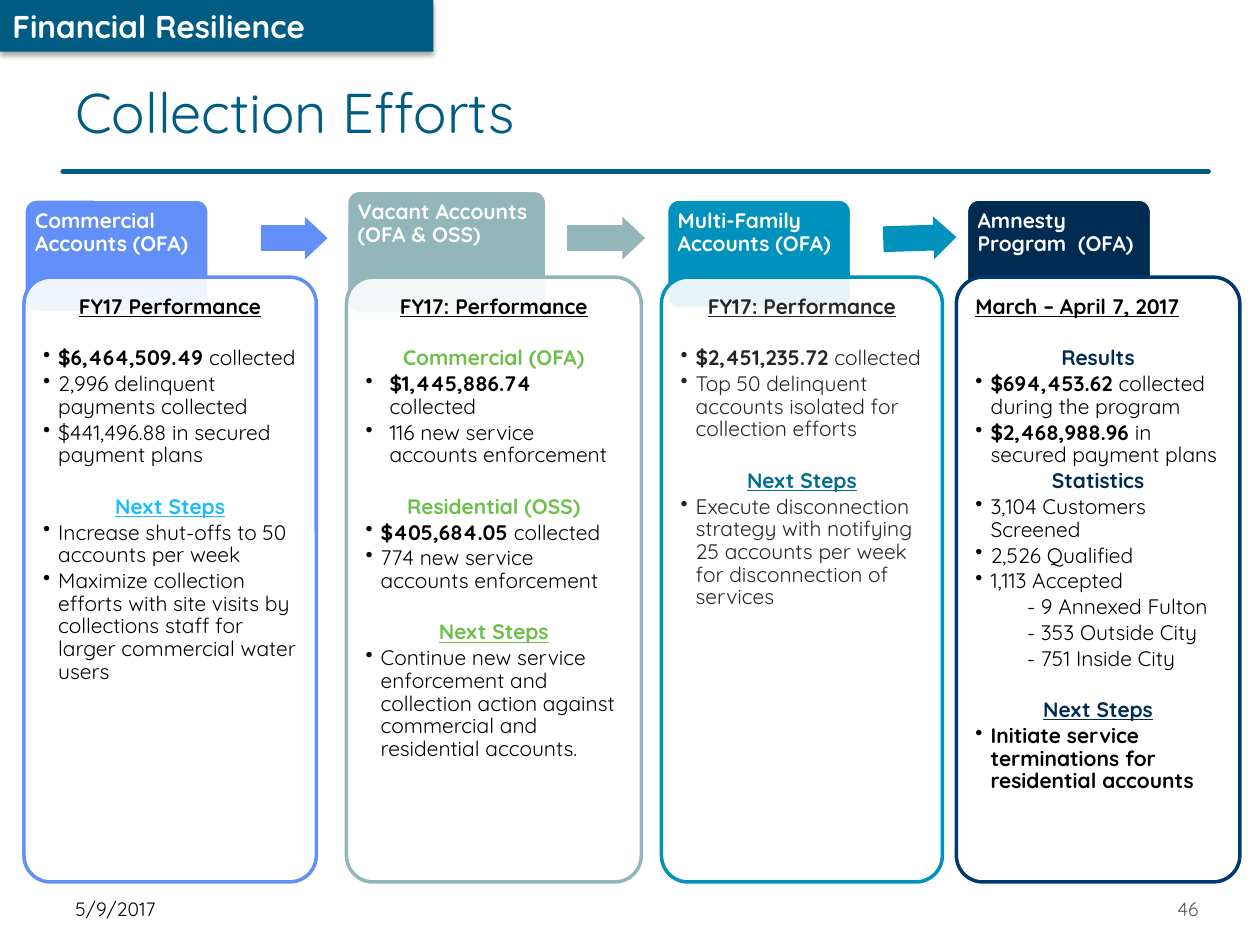
from dataclasses import dataclass

from lxml import etree
from pptx import Presentation
from pptx.dml.color import RGBColor
from pptx.enum.shapes import MSO_CONNECTOR, MSO_SHAPE
from pptx.enum.text import MSO_ANCHOR, PP_ALIGN
from pptx.oxml.ns import qn
from pptx.util import Inches, Pt

FONT = "Quicksand"
WHITE = RGBColor(0xFF, 0xFF, 0xFF)
BLACK = RGBColor(0x00, 0x00, 0x00)
CHARCOAL = RGBColor(0x26, 0x26, 0x26)
GRAY = RGBColor(0x59, 0x59, 0x59)
TEAL = RGBColor(0x00, 0x5C, 0x82)
BLUE = RGBColor(0x62, 0x90, 0xF8)
SKY = RGBColor(0x1B, 0xBC, 0xFF)
SAGE = RGBColor(0x93, 0xB6, 0xBB)
GREEN = RGBColor(0x6C, 0xC0, 0x49)
CYAN = RGBColor(0x00, 0x92, 0xBC)
DEEP_CYAN = RGBColor(0x00, 0x6D, 0x8D)
NAVY = RGBColor(0x00, 0x2B, 0x53)
NAVY_LINE = RGBColor(0x00, 0x39, 0x6F)

CARD_TOP, CARD_HEIGHT = 2.2, 4.8
SECTION_GAP = 14.6  # points above a new section


@dataclass
class Head:
    text: str
    color: RGBColor = BLACK
    underline: bool = True
    align: PP_ALIGN = PP_ALIGN.CENTER
    gap: float = SECTION_GAP


@dataclass
class Item:
    lead: str = ""  # bold start
    rest: str = ""
    gap: float = 0
    hang: float = 0.12
    margin: float = 0.12
    bullet: bool = True


@dataclass
class Column:
    title: str
    color: RGBColor
    border: RGBColor
    ink: RGBColor
    tab: tuple[float, float, float, float]
    left: float
    width: float
    lines: list
    opacity: int = 90


@dataclass
class Arrow:
    left: float
    width: float
    color: RGBColor
    rotation: float = 0


def sub_item(text: str) -> Item:
    return Item(rest=text, margin=0.41, hang=0, bullet=False)


COLUMNS = [
    Column("Commercial Accounts (OFA)", BLUE, BLUE, BLACK, (0.19, 1.58, 1.47, 0.9), 0.19, 2.32, [
        Head("FY17 Performance", gap=0),
        Item("$6,464,509.49 ", "collected", gap=SECTION_GAP),
        Item(rest="2,996 delinquent payments collected"),
        Item(rest="$441,496.88 in secured payment plans"),
        Head("Next Steps", SKY),
        Item(rest="Increase shut-offs to 50 accounts per week"),
        Item(rest="Maximize collection efforts with site visits by "
                  "collections staff for larger commercial water users"),
    ]),
    Column("Vacant Accounts (OFA & OSS)", SAGE, SAGE, BLACK, (2.75, 1.51, 1.59, 0.98), 2.75, 2.34, [
        Head("FY17: Performance", gap=0),
        Head("Commercial (OFA)", GREEN, underline=False),
        Item("$1,445,886.74 ", "collected", margin=0.19, hang=0.19),
        Item(rest="116 new service accounts enforcement", margin=0.19, hang=0.19),
        Head("Residential (OSS)", GREEN, underline=False),
        Item("$405,684.05 ", "collected"),
        Item(rest="774 new service accounts enforcement"),
        Head("Next Steps", GREEN),
        Item(rest="Continue new service enforcement and collection action "
                  "against commercial and residential accounts."),
    ]),
    Column("Multi-Family Accounts (OFA)", CYAN, CYAN, CHARCOAL, (5.29, 1.58, 1.47, 0.87), 5.25, 2.23, [
        Head("FY17: Performance", CHARCOAL, gap=0),
        Item("$2,451,235.72 ", "collected", gap=SECTION_GAP),
        Item(rest="Top 50 delinquent accounts isolated for collection efforts"),
        Head("Next Steps", DEEP_CYAN),
        Item(rest="Execute disconnection strategy with notifying 25 accounts "
                  "per week for disconnection of services"),
    ]),
    Column("Amnesty Program  (OFA)", NAVY, NAVY_LINE, BLACK, (7.67, 1.58, 1.47, 1.02), 7.59, 2.25, [
        Head("March – April 7, 2017", align=PP_ALIGN.LEFT, gap=0),
        Head("Results", NAVY, underline=False),
        Item("$694,453.62 ", "collected during the program"),
        Item("$2,468,988.96 ", "in secured payment plans"),
        Head("Statistics", NAVY, underline=False, gap=0),
        Item(rest="3,104 Customers Screened"),
        Item(rest="2,526 Qualified"),
        Item(rest="1,113 Accepted"),
        sub_item("- 9 Annexed Fulton"),
        sub_item("- 353 Outside City"),
        sub_item("- 751 Inside City"),
        Head("Next Steps", NAVY),
        Item("Initiate service terminations for residential accounts"),
    ], opacity=100),
]
ARROWS = [Arrow(2.07, 0.53, BLUE), Arrow(4.5, 0.62, SAGE), Arrow(7.01, 0.58, CYAN, -1.8)]


def add_text(p, text: str, *, size=12, color=BLACK, bold=False, underline=False) -> None:
    r = p.add_run()
    r.text = text
    f = r.font
    f.name, f.size, f.bold, f.underline = FONT, Pt(size), bold, underline
    f.color.rgb = color


def set_frame(shape, inset_x: float, inset_y: float, anchor=MSO_ANCHOR.TOP):
    tf = shape.text_frame
    tf.word_wrap = True
    tf.vertical_anchor = anchor
    tf.margin_left = tf.margin_right = Inches(inset_x)
    tf.margin_top = tf.margin_bottom = Inches(inset_y)
    return tf


def add_box(s, kind, box, fill=None, line=None):
    sp = s.shapes.add_shape(kind, *map(Inches, box))
    sp.shadow.inherit = False
    sp.fill.solid()
    sp.fill.fore_color.rgb = fill
    if line is None:
        sp.line.fill.background()
    else:
        sp.line.color.rgb = line
        sp.line.width = Pt(2)
    return sp


def add_rounded(s, box, radius: float, fill, line, inset: float):
    sp = add_box(s, MSO_SHAPE.ROUNDED_RECTANGLE, box, fill, line)
    sp.adjustments[0] = radius / min(box[2:])
    return sp, set_frame(sp, inset, inset)


def add_label(s, box, text: str, align=PP_ALIGN.LEFT, **fmt) -> None:
    tf = set_frame(s.shapes.add_textbox(*map(Inches, box)), 0.1, 0, MSO_ANCHOR.MIDDLE)
    tf.paragraphs[0].alignment = align
    add_text(tf.paragraphs[0], text, **fmt)


def add_line(p, line, ink: RGBColor) -> None:
    p.line_spacing, p.space_after = 0.9, Pt(1.8)
    if line.gap:
        p.space_before = Pt(line.gap)
    if isinstance(line, Head):
        p.alignment = line.align
        add_text(p, line.text, color=line.color, bold=True, underline=line.underline)
        return
    p.alignment = PP_ALIGN.LEFT
    pPr = p._p.get_or_add_pPr()
    pPr.set("marL", str(Inches(line.margin)))
    pPr.set("indent", str(-Inches(line.hang)))
    if line.bullet:
        etree.SubElement(pPr, qn("a:buChar"), char="•")
    for text, bold in ((line.lead, True), (line.rest, False)):
        if text:
            add_text(p, text, color=ink, bold=bold)


def add_column(s, col: Column) -> None:
    _, tf = add_rounded(s, col.tab, 0.1, col.color, WHITE, 0.06)
    p = tf.paragraphs[0]
    p.alignment, p.line_spacing = PP_ALIGN.LEFT, 0.9
    add_text(p, col.title, color=WHITE, bold=True)

    box = (col.left, CARD_TOP, col.width, CARD_HEIGHT)
    sp, tf = add_rounded(s, box, 0.21, WHITE, col.border, 0.09)
    if col.opacity < 100:
        white = sp._element.spPr.find(qn("a:solidFill"))[0]
        etree.SubElement(white, qn("a:alpha"), val=str(col.opacity * 1000))
    for i, line in enumerate(col.lines):
        add_line(tf.add_paragraph() if i else tf.paragraphs[0], line, col.ink)


def add_arrow(s, arrow: Arrow) -> None:
    sp = add_box(s, MSO_SHAPE.RIGHT_ARROW, (arrow.left, 1.72, arrow.width, 0.34), arrow.color)
    sp.adjustments[0], sp.adjustments[1] = 0.6, 0.53
    sp.rotation = arrow.rotation


def add_banner(s) -> None:
    sp = add_box(s, MSO_SHAPE.RECTANGLE, (0, 0, 3.44, 0.41), TEAL)
    effects = sp._element.spPr.find(qn("a:effectLst"))
    shadow = etree.SubElement(effects, qn("a:outerShdw"), blurRad=str(Pt(3.1)),
                              dist=str(Pt(1.8)), dir="5400000", rotWithShape="0")
    black = etree.SubElement(shadow, qn("a:srgbClr"), val="000000")
    etree.SubElement(black, qn("a:alpha"), val="35000")
    p = set_frame(sp, 0.1, 0, MSO_ANCHOR.MIDDLE).paragraphs[0]
    p.alignment = PP_ALIGN.LEFT
    add_text(p, "Financial Resilience", size=18, color=WHITE, bold=True)


def add_rule(s) -> None:
    rule = s.shapes.add_connector(MSO_CONNECTOR.STRAIGHT, Inches(0.5), Inches(1.36), Inches(9.59), Inches(1.36))
    rule.line.color.rgb, rule.line.width = TEAL, Pt(3)
    rule.line._get_or_add_ln().set("cap", "rnd")
    etree.SubElement(rule._element.spPr, qn("a:effectLst"))


def main() -> None:
    prs = Presentation()
    prs.slide_width, prs.slide_height = Inches(10), Inches(7.5)
    s = prs.slides.add_slide(prs.slide_layouts[6])

    # Header and footer
    add_banner(s)
    add_rule(s)
    add_label(s, (0.5, 0.43, 7.73, 0.9), "Collection Efforts", size=32, color=TEAL)
    add_label(s, (0.5, 7.11, 1.97, 0.21), "5/9/2017", size=11)
    add_label(s, (8.77, 7.11, 0.84, 0.21), "46", PP_ALIGN.RIGHT, size=11, color=GRAY)

    # Four columns joined by arrows
    for col in COLUMNS:
        add_column(s, col)
    for arrow in ARROWS:
        add_arrow(s, arrow)

    prs.save("out.pptx")


if __name__ == "__main__":
    main()
